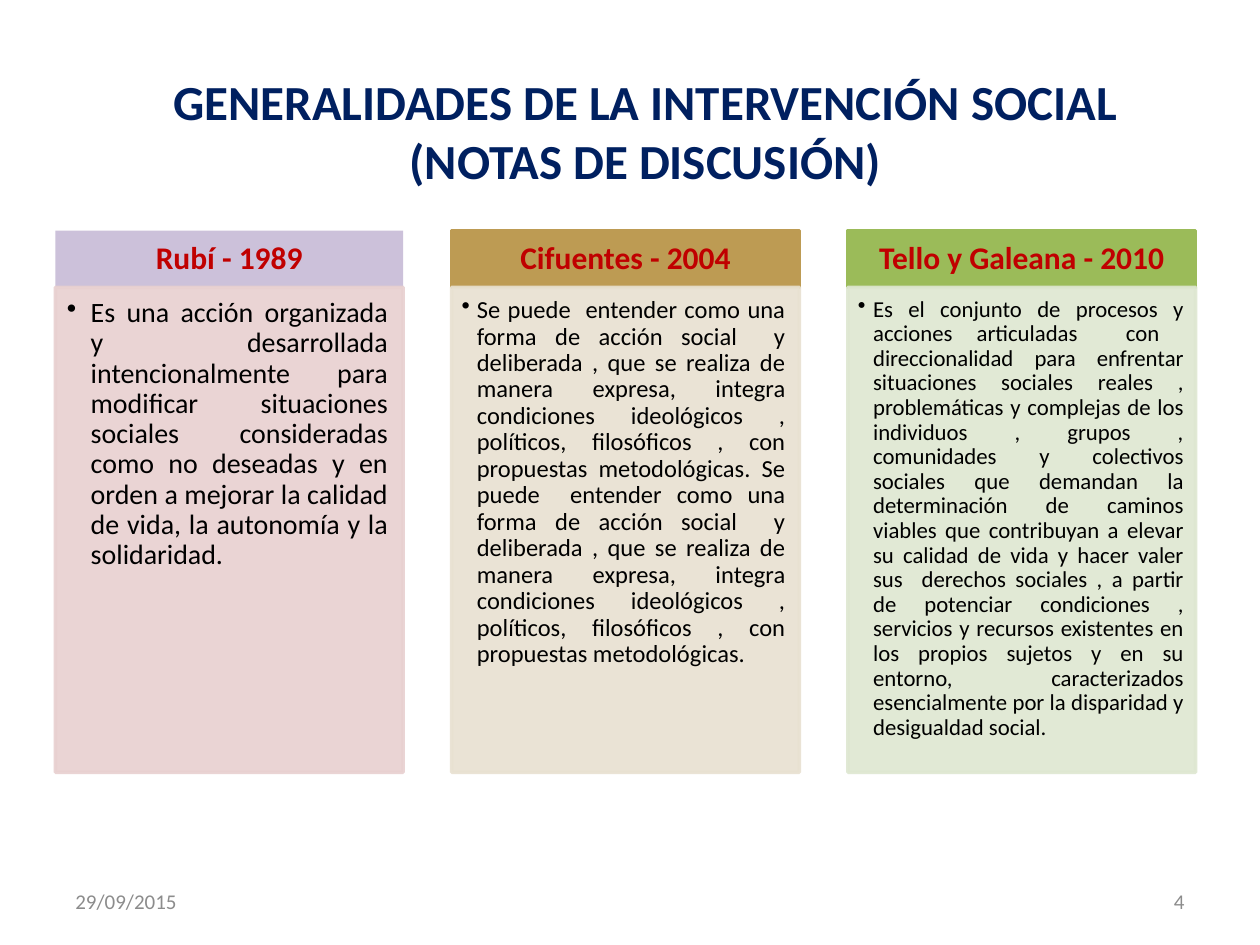
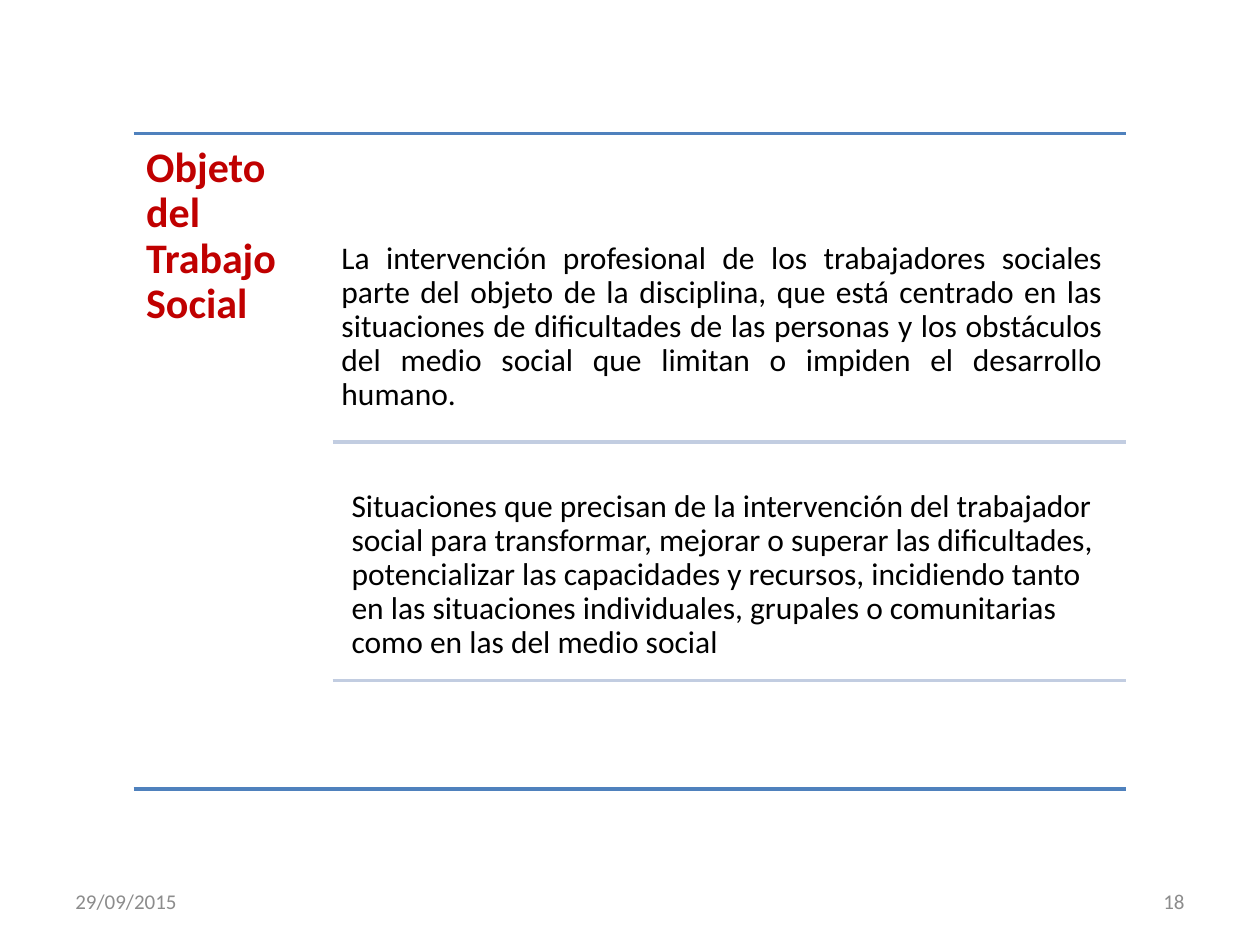
from lxml import etree
from pptx import Presentation, util as u
from pptx.dml.color import RGBColor
from pptx.enum import shapes, text
from pptx.oxml.ns import qn

FONT = "Calibri"
TITLE_ONLY = 5
COLUMNS, ROWS = 100, 75
COLORS = {
    "black": "000000", "navy": "002060", "red": "C00000", "gray": "8C8C8C",
    "lilac": "CCC1DA", "rose": "E8D0D0",
    "ochre": "BD9B53", "sand": "E8E1D1",
    "green": "9BBB59", "mint": "DEE7D1",
    "blue": "4F81BD", "pale blue": "C2CDE1",
}
ALIGN = {
    "left": text.PP_ALIGN.LEFT, "center": text.PP_ALIGN.CENTER,
    "right": text.PP_ALIGN.RIGHT, "justify": text.PP_ALIGN.JUSTIFY,
}
ANCHOR = {"top": text.MSO_ANCHOR.TOP, "middle": text.MSO_ANCHOR.MIDDLE}

# Author, heading fill, heading outline, body fill, size, hanging indent, margins, definition
DEFINITIONS = [
    ("Rubí - 1989", "lilac", None, "rose", 16, 0.19, (0.09, 0.09, 0.12, 0.14),
     "Es una acción organizada y desarrollada intencionalmente para modificar situaciones "
     "sociales consideradas como no deseadas y en orden a mejorar la calidad de vida, "
     "la autonomía y la solidaridad."),
    ("Cifuentes - 2004", "ochre", "ochre", "sand", 14, 0.12, (0.08, 0.08, 0.11, 0.12),
     " ".join(["Se puede  entender como una forma de acción social  y deliberada , que se "
               "realiza de manera expresa, integra condiciones ideológicos , políticos, "
               "filosóficos , con propuestas metodológicas."] * 2)),
    ("Tello y Galeana - 2010", "green", "green", "mint", 13, 0.12, (0.08, 0.08, 0.1, 0.11),
     "Es el conjunto de procesos y acciones articuladas  con  direccionalidad para enfrentar "
     "situaciones sociales reales , problemáticas y complejas de los individuos , grupos , "
     "comunidades y colectivos sociales que demandan la determinación de caminos viables que "
     "contribuyan a elevar su calidad de vida y hacer valer sus  derechos sociales , a partir "
     "de potenciar condiciones , servicios y recursos existentes en los propios sujetos y en su "
     "entorno, caracterizados esencialmente por la disparidad y desigualdad social."),
]


def rgb(name):
    return RGBColor.from_string(COLORS[name])


def set_opacity(color_format_parent, percent):
    """Add an alpha value to the solid colour found under an XML element."""
    color = color_format_parent.find(qn("a:solidFill"))[0]
    etree.SubElement(color, qn("a:alpha")).set("val", str(percent * 1000))


def write(shape, content, size=18, color="black", bold=False, align="left", anchor="top",
          margins=(0.1, 0.05, 0.1, 0.05), spacing=1.0, bullet_indent=None):
    """Fill a shape with text, one paragraph a line; margins run left, top, right, bottom."""
    frame = shape.text_frame
    frame.word_wrap = True
    frame.auto_size = text.MSO_AUTO_SIZE.NONE
    frame.vertical_anchor = ANCHOR[anchor]
    (frame.margin_left, frame.margin_top,
     frame.margin_right, frame.margin_bottom) = map(u.Inches, margins)
    frame.text = content
    for paragraph in frame.paragraphs:
        paragraph.alignment = ALIGN[align]
        paragraph.line_spacing = spacing
        paragraph.space_before = u.Pt(0)
        for run in paragraph.runs:
            run.font.name = FONT
            run.font.size = u.Pt(size)
            run.font.bold = bold
            run.font.color.rgb = rgb(color)
        if bullet_indent:
            properties = paragraph._p.get_or_add_pPr()
            indent = u.Inches(bullet_indent)
            properties.set("marL", str(indent))
            properties.set("indent", str(-indent))
            etree.SubElement(properties, qn("a:buChar")).set("char", "•")


class Deck:
    """Shared style and current slide; places are in grid columns and rows."""

    def __init__(self):
        self.presentation = Presentation()
        self.presentation.slide_width = u.Inches(10)
        self.presentation.slide_height = u.Inches(7.5)
        self.slide = None

    def x(self, columns):
        return round(self.presentation.slide_width * columns / COLUMNS)

    def y(self, rows):
        return round(self.presentation.slide_height * rows / ROWS)

    def place(self, left, top, width, height):
        return self.x(left), self.y(top), self.x(width), self.y(height)

    def add_slide(self, title, place, number, **style):
        layout = self.presentation.slide_layouts[TITLE_ONLY]
        self.slide = self.presentation.slides.add_slide(layout)
        shape = self.slide.shapes.title
        shape.left, shape.top, shape.width, shape.height = self.place(*place)
        write(shape, title, bold=True, **style)
        footer = dict(size=12, color="gray", anchor="middle")
        self.add_text("29/09/2015", (5, 69.5, 23.3, 4), **footer)
        self.add_text(number, (71.7, 69.5, 23.3, 4), align="right", **footer)

    def add_text(self, content, place, **style):
        write(self.slide.shapes.add_textbox(*self.place(*place)), content, **style)

    def add_box(self, content, place, fill, outline=None, opacity=100, **style):
        shape = self.slide.shapes.add_shape(
            shapes.MSO_SHAPE.RECTANGLE, *self.place(*place))
        shape.shadow.inherit = False
        shape.fill.solid()
        shape.fill.fore_color.rgb = rgb(fill)
        if outline:
            shape.line.color.rgb = rgb(outline)
            shape.line.width = u.Pt(2)
        else:
            shape.line.fill.background()
        if opacity < 100:
            properties = shape._element.spPr
            set_opacity(properties, opacity)
            set_opacity(properties.find(qn("a:ln")), opacity)
        write(shape, content, **style)

    def add_rule(self, left, right, row, color):
        line = self.slide.shapes.add_connector(
            shapes.MSO_CONNECTOR.STRAIGHT, self.x(left), self.y(row), self.x(right), self.y(row))
        line.line.color.rgb = rgb(color)
        line.line.width = u.Pt(2)
        etree.SubElement(line._element.spPr, qn("a:effectLst"))


def add_definitions_slide(deck):
    deck.add_slide("GENERALIDADES DE LA INTERVENCIÓN SOCIAL\n(NOTAS DE DISCUSIÓN)",
                   (5.9, 5.2, 90.6, 6.6), "4", size=28, color="navy", align="center")
    first_left, step, width = 4.4, 31.45, 27.6
    heading_top, heading_height, body_height = 18.3, 4.5, 38.5
    for index, definition in enumerate(DEFINITIONS):
        author, heading_fill, outline, body_fill, size, indent, margins, body = definition
        left = first_left + index * step
        deck.add_box(author, (left, heading_top, width, heading_height), heading_fill, outline,
                     color="red", bold=True, align="center", anchor="middle",
                     margins=(0.14, 0.08, 0.14, 0.08), spacing=0.9)
        deck.add_box(body, (left, heading_top + heading_height, width, body_height),
                     body_fill, body_fill, opacity=90, size=size, align="justify",
                     margins=margins, spacing=0.9, bullet_indent=indent)


def add_object_slide(deck):
    left, text_left, right = 10.6, 26.4, 89.4
    deck.add_slide("Objeto del Trabajo Social", (left, 10.6, 15.7, 26.9), "18",
                   size=24, color="red", margins=(0.1,) * 4, spacing=0.9)
    body = dict(margins=(0.07,) * 4, spacing=0.9)
    deck.add_text(
        "La intervención profesional de los trabajadores sociales parte del objeto de la "
        "disciplina, que está centrado en las situaciones de dificultades de las personas y los "
        "obstáculos del medio social que limitan o impiden el desarrollo humano.",
        (text_left, 18.5, 61.8, 12.5), align="justify", **body)
    deck.add_text(
        "Situaciones que precisan de la intervención del trabajador social para transformar, "
        "mejorar o superar las dificultades, potencializar las capacidades y recursos, "
        "incidiendo tanto en las situaciones individuales, grupales o comunitarias como en las "
        "del medio social",
        (27.2, 38.2, 61.8, 12.5), **body)
    for row in (10.6, 62.6):
        deck.add_rule(left, right, row, "blue")
    for row in (35.1, 54):
        deck.add_rule(text_left, right, row, "pale blue")


def main():
    deck = Deck()
    add_definitions_slide(deck)
    add_object_slide(deck)
    deck.presentation.save("out.pptx")


if __name__ == "__main__":
    main()
